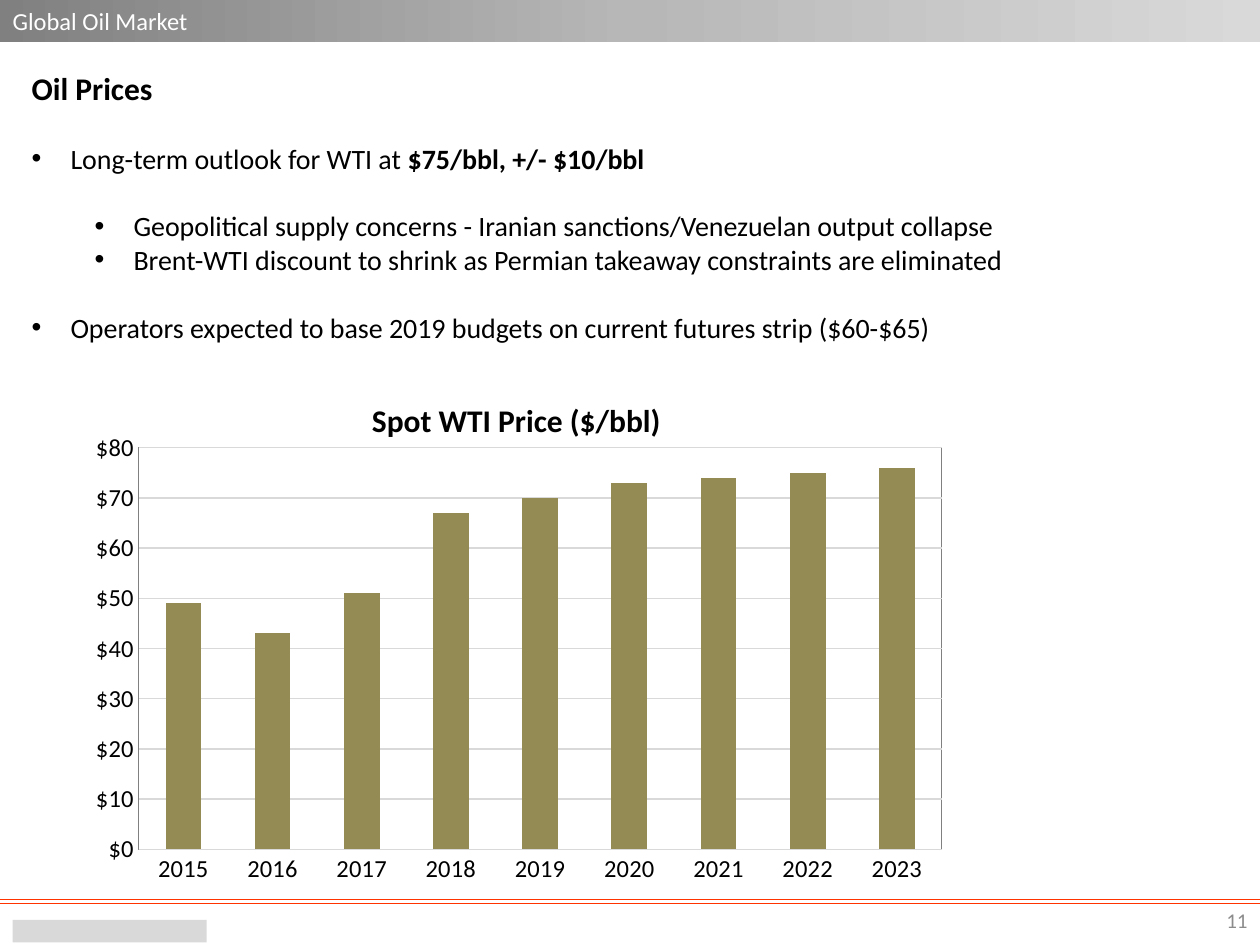
from copy import deepcopy
from lxml import etree
from pptx import Presentation
from pptx import util as u
from pptx.chart.data import CategoryChartData
from pptx.dml.color import RGBColor
from pptx.enum import chart as charts, shapes, text
from pptx.oxml import parse_xml
from pptx.oxml.ns import nsdecls, qn

BLACK = RGBColor(0, 0, 0)
WHITE = RGBColor(255, 255, 255)
GRAY = RGBColor(0x80, 0x80, 0x80)
NUMBER_GRAY = RGBColor(0x8C, 0x8C, 0x8C)
LIGHT_GRAY = RGBColor(0xD9, 0xD9, 0xD9)
MID_GRAY = RGBColor(0xB7, 0xB7, 0xB7)
ORANGE = RGBColor(0xFF, 0x33, 0x00)
OLIVE = RGBColor(0x94, 0x8A, 0x54)
FONT = "Calibri"

SECTION = "Global Oil Market"
HEADING = "Oil Prices"
GAP = 19.5
BULLETS = [
    (0.31, GAP, [("Long-term outlook for WTI at ", False), ("$75/bbl, +/- $10/bbl", True)]),
    (0.81, GAP, [("Geopolitical supply concerns - Iranian sanctions/Venezuelan output collapse", False)]),
    (0.81, 0, [("Brent-WTI discount to shrink as Permian takeaway constraints are eliminated", False)]),
    (0.31, GAP, [("Operators expected to base 2019 budgets on current futures strip ($60-$65)", False)]),
]
CHART_TITLE = "Spot WTI Price ($/bbl)"
PRICES = {"2015": 49, "2016": 43, "2017": 51, "2018": 67, "2019": 70,
          "2020": 73, "2021": 74, "2022": 75, "2023": 76}
PLOT_LAYOUT = {"x": 0.085, "y": 0.119, "w": 0.9, "h": 0.801}
TITLE_LAYOUT = {"x": 0.34, "y": 0.01}
PAGE = "11"
BAR_STOPS = [(0, GRAY), (0.5, MID_GRAY), (1, LIGHT_GRAY)]
RULES = [7.14, 7.17]


def box(left, top, width, height):
    return [u.Inches(value) for value in (left, top, width, height)]


def place(shape, *area):
    shape.left, shape.top, shape.width, shape.height = box(*area)


def style(font, size, color, bold=False):
    font.name, font.size, font.bold = FONT, u.Pt(size), bold
    font.color.rgb = color


def add_title_bar(slide):
    bar = slide.shapes.title
    place(bar, 0, 0, 10, 0.33)
    bar.fill.gradient()
    bar.fill.gradient_angle = 0
    stops = bar._element.spPr.find(".//" + qn("a:gsLst"))
    stops.append(deepcopy(stops[0]))
    for stop, (position, color) in zip(bar.fill.gradient_stops, BAR_STOPS):
        stop.position = position
        stop.color.rgb = color
    frame = bar.text_frame
    frame.text = SECTION
    frame.auto_size = text.MSO_AUTO_SIZE.NONE
    frame.vertical_anchor = text.MSO_ANCHOR.MIDDLE
    frame.paragraphs[0].alignment = text.PP_ALIGN.LEFT
    style(frame.paragraphs[0].runs[0].font, 14, WHITE)


def set_bullet(paragraph, indent):
    properties = paragraph._p.get_or_add_pPr()
    properties.set("marL", str(u.Inches(indent)))
    properties.set("indent", str(-u.Inches(0.31) if indent else 0))
    if indent:
        etree.SubElement(properties, qn("a:buFont"), typeface="Arial")
        etree.SubElement(properties, qn("a:buChar"), char="•")
    else:
        etree.SubElement(properties, qn("a:buNone"))


def add_outlook(slide):
    body = slide.placeholders[1]
    place(body, 0.15, 0.5, 9.26, 2.56)
    frame = body.text_frame
    frame.auto_size = text.MSO_AUTO_SIZE.NONE
    frame.vertical_anchor = text.MSO_ANCHOR.TOP
    rows = [(0, 0, 18, [(HEADING, True)])]
    rows += [(indent, gap, 16, runs) for indent, gap, runs in BULLETS]
    for index, (indent, gap, size, runs) in enumerate(rows):
        paragraph = frame.add_paragraph() if index else frame.paragraphs[0]
        paragraph.space_before = u.Pt(gap)
        set_bullet(paragraph, indent)
        for words, bold in runs:
            run = paragraph.add_run()
            run.text = words
            style(run.font, size, BLACK, bold)


def set_layout(parent, index, shares, target=""):
    for old in parent.findall(qn("c:layout")):
        parent.remove(old)
    sizes = "".join(f'<c:{key} val="{value}"/>' for key, value in shares.items())
    parent.insert(index, parse_xml(
        f'<c:layout {nsdecls("c")}><c:manualLayout>{target}<c:xMode val="edge"/>'
        f'<c:yMode val="edge"/>{sizes}</c:manualLayout></c:layout>'))


def add_price_chart(slide):
    data = CategoryChartData()
    data.categories = list(PRICES)
    data.add_series("Series 1", list(PRICES.values()))
    chart = slide.shapes.add_chart(charts.XL_CHART_TYPE.COLUMN_CLUSTERED,
                                   *box(0.5, 3.08, 7.08, 3.98), data).chart
    style(chart.font, 10, BLACK, True)
    chart.has_legend = False
    chart.has_title = True
    title = chart.chart_title.text_frame
    title.text = CHART_TITLE
    style(title.paragraphs[0].runs[0].font, 18, BLACK, True)
    set_layout(chart._chartSpace.find(".//" + qn("c:title")), 1, TITLE_LAYOUT)

    plot = chart.plots[0]
    plot.gap_width = 150
    plot.vary_by_categories = False
    fill = plot.series[0].format.fill
    fill.solid()
    fill.fore_color.rgb = OLIVE

    years, dollars = chart.category_axis, chart.value_axis
    for axis in (years, dollars):
        style(axis.tick_labels.font, 14, BLACK)
        axis.major_tick_mark = axis.minor_tick_mark = charts.XL_TICK_MARK.NONE
    dollars.minimum_scale, dollars.maximum_scale, dollars.major_unit = 0, 80, 10
    dollars.tick_labels.number_format = '"$"#,##0'
    dollars.tick_labels.number_format_is_linked = False
    dollars.format.line.fill.background()
    for line in (years.format.line, dollars.major_gridlines.format.line):
        line.color.rgb = LIGHT_GRAY
        line.width = u.Pt(0.75)

    area = chart._chartSpace.find(".//" + qn("c:plotArea"))
    set_layout(area, 0, PLOT_LAYOUT, '<c:layoutTarget val="inner"/>')
    area.append(parse_xml(
        f'<c:spPr {nsdecls("c", "a")}><a:noFill/><a:ln w="9525"><a:solidFill>'
        f'<a:srgbClr val="{GRAY}"/></a:solidFill></a:ln></c:spPr>'))


def add_rule(slide, y):
    rule = slide.shapes.add_connector(shapes.MSO_CONNECTOR.STRAIGHT, 0, u.Inches(y),
                                      u.Inches(10), u.Inches(y))
    rule.line.width = u.Pt(0.75)
    rule.line.fill.solid()
    rule.line.fill.fore_color.rgb = ORANGE
    etree.SubElement(rule._element.spPr, qn("a:effectLst"))
    rule._element.remove(rule._element.find(qn("p:style")))


def add_page_number(slide):
    frame = slide.shapes.add_textbox(*box(7.67, 7.1, 2.33, 0.4)).text_frame
    frame.word_wrap = True
    frame.vertical_anchor = text.MSO_ANCHOR.MIDDLE
    frame.text = PAGE
    frame.paragraphs[0].alignment = text.PP_ALIGN.RIGHT
    style(frame.paragraphs[0].runs[0].font, 12, NUMBER_GRAY)


def add_footer_block(slide):
    block = slide.shapes.add_shape(shapes.MSO_SHAPE.RECTANGLE, *box(0.1, 7.3, 1.54, 0.18))
    block.shadow.inherit = False
    block.fill.solid()
    block.fill.fore_color.rgb = LIGHT_GRAY
    block.line.fill.background()


def main():
    presentation = Presentation()
    presentation.slide_width, presentation.slide_height = u.Inches(10), u.Inches(7.5)
    slide = presentation.slides.add_slide(presentation.slide_layouts[1])
    add_title_bar(slide)
    add_outlook(slide)
    for y in RULES:
        add_rule(slide, y)
    add_price_chart(slide)
    add_page_number(slide)
    add_footer_block(slide)
    presentation.save("out.pptx")


if __name__ == "__main__":
    main()
